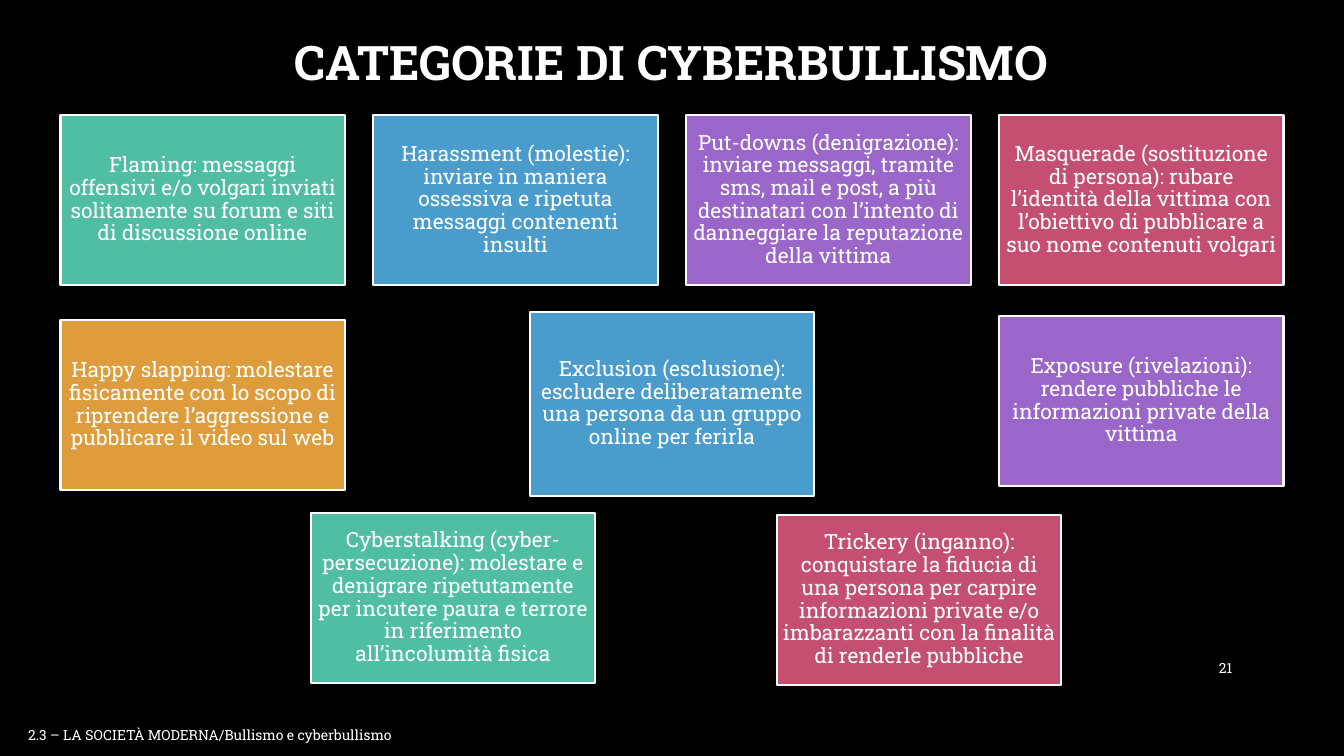
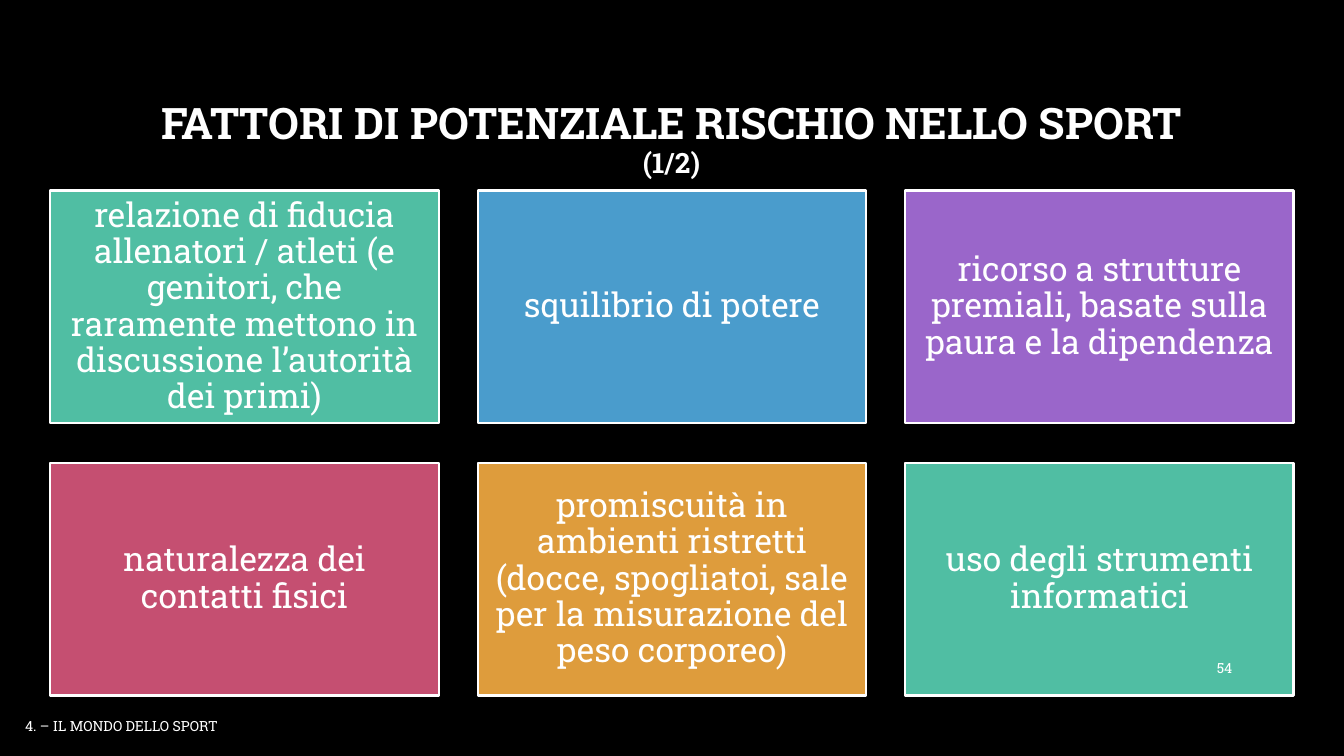
from dataclasses import dataclass

import pptx
import pptx.dml.color
import pptx.enum.shapes
import pptx.enum.text
import pptx.util

In, Pt = pptx.util.Inches, pptx.util.Pt
RGB = pptx.dml.color.RGBColor.from_string
ALIGN = pptx.enum.text.PP_ALIGN
ANCHOR = pptx.enum.text.MSO_ANCHOR


@dataclass(frozen=True)
class Theme:
    font: str = "Roboto Slab"
    back: str = "000000"
    ink: str = "FFFFFF"
    cards: tuple = ("50BEA3", "4A9CCC", "9A66CA", "C54F71", "DE9C3C")
    border: float = 1.5
    small: int = 10
    tight: float = 0.9


T = Theme()
W, H = 13.33, 7.5

# Each slide: title as (text, size) lines, a card grid, and its footer.
# A card is (column, row, text), with an optional height factor.
SLIDES = [
    dict(
        title=[("CATEGORIE DI CYBERBULLISMO", 34)],
        title_box=(1, 0.21, 11.32, 0.88),
        cols=4, left=0.6, top=1.14, card=(2.82, 1.69), size=15, inset=0.06,
        cards=[
            (0, 0, "Flaming: messaggi offensivi e/o volgari inviati solitamente su forum e siti di discussione online"),
            (1, 0, "Harassment (molestie): inviare in maniera ossessiva e ripetuta messaggi contenenti insulti"),
            (2, 0, "Put-downs (denigrazione): inviare messaggi, tramite sms, mail e post, a più destinatari con l’intento di danneggiare la reputazione della vittima"),
            (3, 0, "Masquerade (sostituzione di persona): rubare l’identità della vittima con l’obiettivo di pubblicare a suo nome contenuti volgari"),
            (0, 1.03, "Happy slapping: molestare fisicamente con lo scopo di riprendere l’aggressione e pubblicare il video sul web"),
            (0.8, 2, "Cyberstalking (cyber-persecuzione): molestare e denigrare ripetutamente per incutere paura e terrore in riferimento all’incolumità fisica"),
            (1.5, 0.99, "Exclusion (esclusione): escludere deliberatamente una persona da un gruppo online per ferirla", 1.08),
            (3, 1.01, "Exposure (rivelazioni): rendere pubbliche le informazioni private della vittima"),
            (2.29, 2.01, "Trickery (inganno): conquistare la fiducia di una persona per carpire informazioni private e/o imbarazzanti con la finalità di renderle pubbliche"),
        ],
        number="21",
        footer="2.3 – LA SOCIETÀ MODERNA/Bullismo e cyberbullismo",
        footer_at=(0.18, 7.16),
    ),
    dict(
        title=[("FATTORI DI POTENZIALE RISCHIO NELLO SPORT", 31), ("(1/2)", 20)],
        title_box=(1, 0.67, 11.32, 1.45),
        cols=3, left=0.5, top=1.89, card=(3.85, 2.31), size=24, inset=0.1,
        cards=[
            (0, 0, "relazione di fiducia allenatori / atleti (e genitori, che raramente mettono in discussione l’autorità dei primi)"),
            (1, 0, "squilibrio di potere"),
            (2, 0, "ricorso a strutture premiali, basate sulla paura e la dipendenza"),
            (0, 1, "naturalezza dei contatti fisici"),
            (1, 1, "promiscuità in ambienti ristretti (docce, spogliatoi, sale per la misurazione del peso corporeo)"),
            (2, 1, "uso degli strumenti informatici"),
        ],
        number="54",
        footer="4. – IL MONDO DELLO SPORT",
        footer_at=(0.15, 7.07),
    ),
]


def add_text(s, lines, box, fill=None, bold=False, align=ALIGN.CENTER,
             anchor=ANCHOR.MIDDLE, spacing=T.tight, inset=(0.1, 0.05)):
    """Add (text, size) lines in a text box, or in a bordered card if filled."""
    box = [In(v) for v in box]
    if fill:
        sp = s.shapes.add_shape(pptx.enum.shapes.MSO_SHAPE.RECTANGLE, *box)
        sp.shadow.inherit = False
        sp.fill.solid()
        sp.fill.fore_color.rgb = RGB(fill)
        sp.line.color.rgb = RGB(T.ink)
        sp.line.width = Pt(T.border)
    else:
        sp = s.shapes.add_textbox(*box)
    tf = sp.text_frame
    tf.word_wrap = True
    tf.vertical_anchor = anchor
    tf.margin_left = tf.margin_right = In(inset[0])
    tf.margin_top = tf.margin_bottom = In(inset[1])
    for i, (text, size) in enumerate(lines):
        p = tf.add_paragraph() if i else tf.paragraphs[0]
        p.alignment, p.line_spacing = align, spacing
        r = p.add_run()
        r.text = text
        r.font.name, r.font.size, r.font.bold = T.font, Pt(size), bold
        r.font.color.rgb = RGB(T.ink)


prs = pptx.Presentation()
prs.slide_width, prs.slide_height = In(W), In(H)

# Shared background
bg = prs.slide_master.background.fill
bg.solid()
bg.fore_color.rgb = RGB(T.back)

for d in SLIDES:
    s = prs.slides.add_slide(prs.slide_layouts[6])

    # Title
    add_text(s, d["title"], d["title_box"], bold=True)

    # Cards: columns fill the width between margins, rows use the same gap
    w, h = d["card"]
    gap = (W - 2 * d["left"] - d["cols"] * w) / (d["cols"] - 1)
    for i, (col, row, text, *tall) in enumerate(d["cards"]):
        box = (d["left"] + col * (w + gap), d["top"] + row * (h + gap),
               w, h * (tall[0] if tall else 1))
        add_text(s, [(text, d["size"])], box, fill=T.cards[i % len(T.cards)],
                 inset=(d["inset"], d["inset"]))

    # Slide number and footer
    add_text(s, [(d["number"], T.small)], (11.5, 6.43, 0.82, 0.4),
             align=ALIGN.RIGHT, spacing=1.0)
    add_text(s, [(d["footer"], T.small)], (*d["footer_at"], W / 2, 0.27),
             align=ALIGN.LEFT, anchor=ANCHOR.TOP, spacing=1.0)

prs.save("out.pptx")
